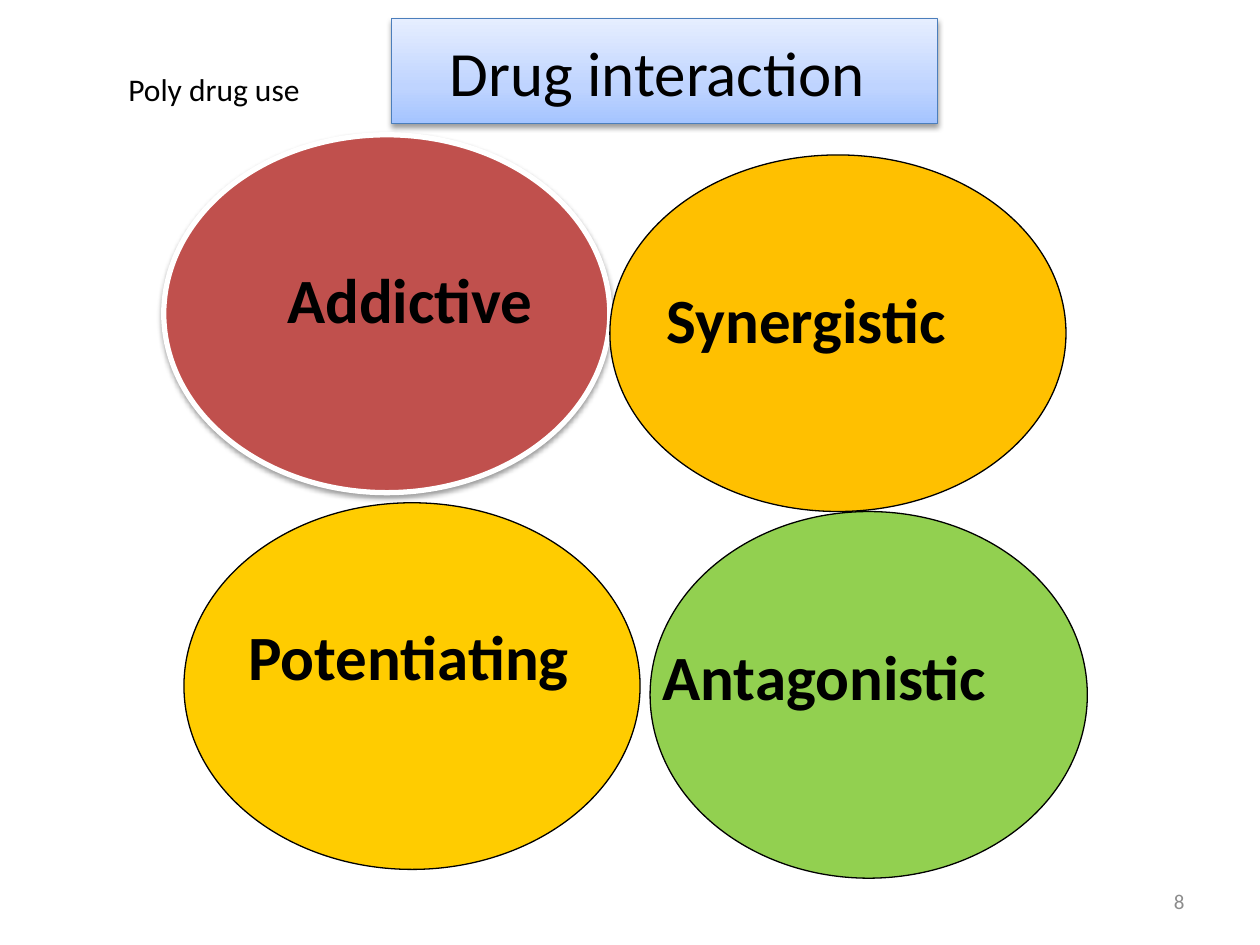
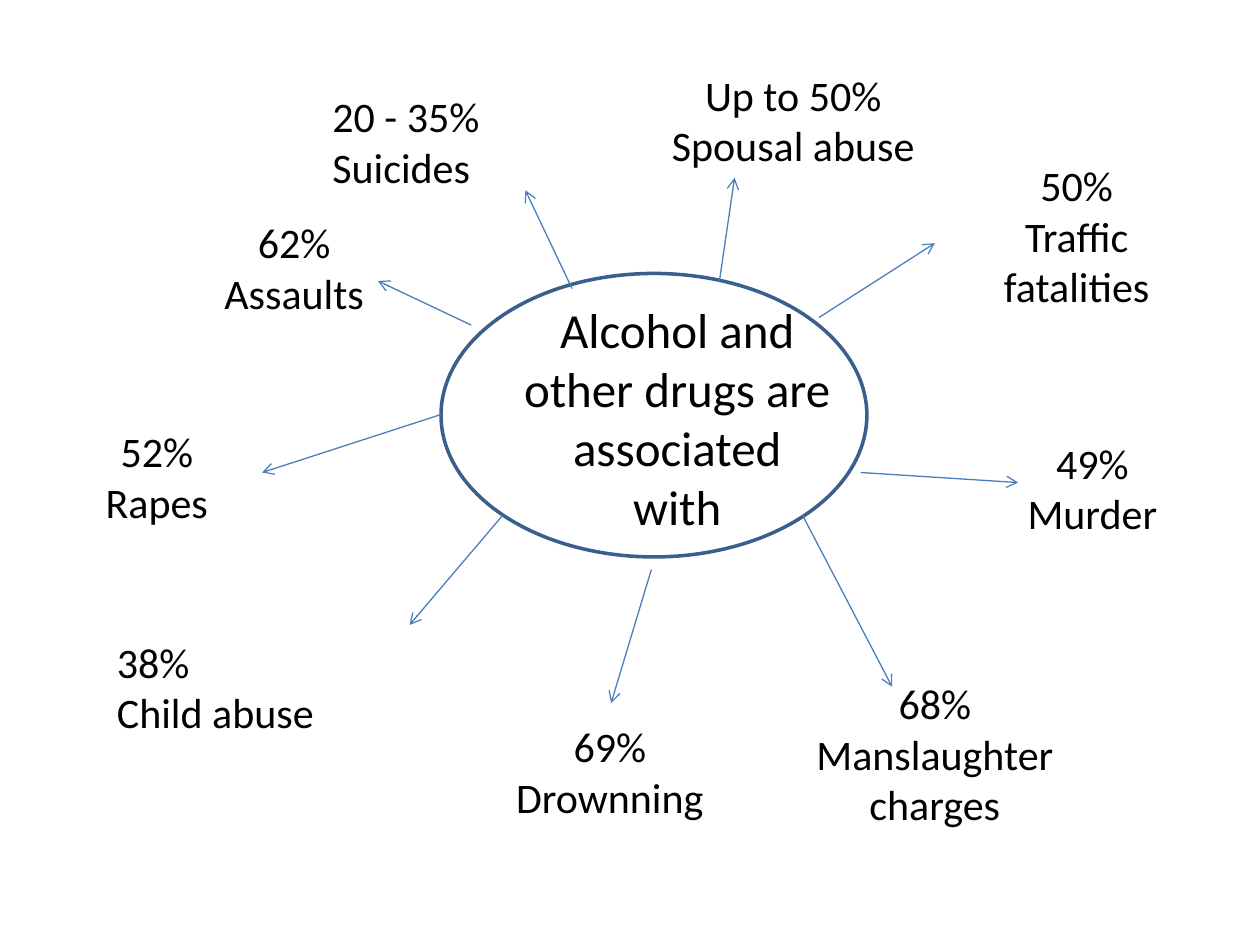
from copy import deepcopy

from lxml import etree
from pptx import Presentation
from pptx.dml.color import RGBColor
from pptx.enum import shapes, text
from pptx.oxml import ns
from pptx.util import Inches, Pt

FONT = "Calibri"
COLORS = {
    "text": "000000", "outline": "000000", "page_number": "8C8C8C", "white": "FFFFFF",
    "accent_line": "4B7EBC", "hub_line": "3A5F8C",
    "red": "C0504D", "orange": "FFC000", "yellow": "FFCC00", "green": "92D050",
}
TITLE_GRADIENT = [(0, "A4C4FF"), (0.35, "BFD4FF"), (1, "E6EEFF")]
LEFT, CENTER, RIGHT = text.PP_ALIGN.LEFT, text.PP_ALIGN.CENTER, text.PP_ALIGN.RIGHT

# Boxes are left, top, width, height in inches.
TITLE = ("Drug interaction ", (3.11, 0.21, 4.33, 0.71))
SUBTITLE = ("Poly drug use", (0.92, 0.51, 1.64, 0.4))
PAGE_NUMBER = ("8", (7.17, 6.95, 2.33, 0.4))
# label, label box, alignment, ellipse box, fill, emphasized
INTERACTIONS = [
    ("Addictive ", (2.01, 2.02, 2.6, 0.71), CENTER, (1.3, 1.07, 3.54, 2.84), "red", True),
    ("Synergistic ", (5, 2.18, 2.91, 0.71), CENTER, (4.84, 1.23, 3.62, 2.83), "orange", False),
    ("Potentiating ", (1.53, 4.85, 3.54, 0.7), CENTER, (1.46, 3.99, 3.62, 2.91), "yellow", False),
    ("Antagonistic", (5.16, 5.01, 3.31, 0.71), LEFT, (5.16, 4.06, 3.47, 2.91), "green", False),
]

HUB = ("Alcohol and\nother drugs are\nassociated\nwith", (3.91, 2.33, 2.93, 1.99))
HUB_ELLIPSE = (3.5, 2.17, 3.38, 2.25)
# label, label box, alignment, arrow start, arrow end
CONSEQUENCES = [
    ("20 - 35%\nSuicides", (2.54, 0.67, 2, 0.91), LEFT, (4.54, 2.29), (4.17, 1.51)),
    ("Up to 50%\nSpousal abuse", (5.17, 0.5, 2.25, 0.91), CENTER, (5.71, 2.23), (5.83, 1.41)),
    ("50%\nTraffic fatalities", (7.67, 1.22, 1.75, 1.31), CENTER, (6.5, 2.52), (7.42, 1.93)),
    ("49%\nMurder", (7.92, 3.42, 1.5, 0.91), CENTER, (6.83, 3.75), (8.08, 3.83)),
    ("68%\nManslaughter\ncharges", (6.17, 5.33, 2.5, 1.31), CENTER, (6.37, 4.09), (7.08, 5.45)),
    ("69%\nDrownning", (3.99, 5.67, 1.7, 0.91), CENTER, (5.17, 4.52), (4.85, 5.58)),
    ("38%\nChild abuse", (0.83, 5, 2.17, 0.91), LEFT, (3.99, 4.09), (3.25, 4.96)),
    ("52%\nRapes", (0.58, 3.33, 1.33, 0.91), CENTER, (3.5, 3.29), (2.08, 3.75)),
    ("62%\nAssaults", (1.67, 1.67, 1.33, 0.91), CENTER, (3.74, 2.58), (3, 2.23)),
]


def rgb(name):
    return RGBColor.from_string(COLORS[name])


def inches(values):
    return [Inches(value) for value in values]


def write(shape, content, size, align=CENTER, color="text", bold=False):
    frame = shape.text_frame
    frame.text = content
    for paragraph in frame.paragraphs:
        paragraph.alignment = align
        for run in paragraph.runs:
            run.font.name, run.font.size, run.font.bold = FONT, Pt(size), bold
            run.font.color.rgb = rgb(color)


def add_text(slide, content, box, size, wrap=True, **style):
    shape = slide.shapes.add_textbox(*inches(box))
    shape.text_frame.word_wrap = wrap
    write(shape, content, size, **style)
    return shape


def set_line(shape, color, width):
    shape.line.color.rgb = rgb(color)
    shape.line.width = Pt(width)


def add_ellipse(slide, box, fill, line, width):
    shape = slide.shapes.add_shape(shapes.MSO_SHAPE.OVAL, *inches(box))
    shape.shadow.inherit = False
    shape.fill.solid()
    shape.fill.fore_color.rgb = rgb(fill)
    set_line(shape, line, width)
    return shape


def add_shadow(shape):
    """Give the shape a soft shadow falling straight down."""
    shape.shadow.inherit = False
    effects = shape._element.spPr.find(ns.qn("a:effectLst"))
    shadow = etree.SubElement(effects, ns.qn("a:outerShdw"), blurRad="40000",
                              dist="20000", dir="5400000", rotWithShape="0")
    color = etree.SubElement(shadow, ns.qn("a:srgbClr"), val=COLORS["outline"])
    etree.SubElement(color, ns.qn("a:alpha"), val="38000")


def fill_gradient(shape, stops):
    shape.fill.gradient()
    shape.fill.gradient_angle = 90
    stop_list = shape._element.spPr.find(".//" + ns.qn("a:gsLst"))
    while len(stop_list) < len(stops):
        stop_list.append(deepcopy(stop_list[0]))
    for stop, (position, color) in zip(shape.fill.gradient_stops, stops):
        stop.position = position
        stop.color.rgb = RGBColor.from_string(color)


def add_arrow(slide, start, end):
    connector = slide.shapes.add_connector(
        shapes.MSO_CONNECTOR.STRAIGHT, *inches(start + end))
    set_line(connector, "accent_line", 0.75)
    etree.SubElement(connector.line._get_or_add_ln(), ns.qn("a:tailEnd"), type="arrow")
    etree.SubElement(connector._element.spPr, ns.qn("a:effectLst"))


def build_interactions(presentation):
    slide = presentation.slides.add_slide(presentation.slide_layouts[5])
    title = slide.shapes.title
    content, box = TITLE
    title.left, title.top, title.width, title.height = inches(box)
    fill_gradient(title, TITLE_GRADIENT)
    set_line(title, "accent_line", 0.75)
    add_shadow(title)
    title.text_frame.auto_size = text.MSO_AUTO_SIZE.SHAPE_TO_FIT_TEXT
    write(title, content, 36)

    for _, _, _, box, fill, emphasized in INTERACTIONS:
        line, width = ("white", 3) if emphasized else ("outline", 0.75)
        ellipse = add_ellipse(slide, box, fill, line, width)
        if emphasized:
            add_shadow(ellipse)
    for label, box, align, *_ in INTERACTIONS:
        add_text(slide, label, box, 36, align=align, bold=True)
    add_text(slide, *SUBTITLE, 18, wrap=False, align=LEFT)
    number = add_text(slide, *PAGE_NUMBER, 12, align=RIGHT, color="page_number")
    number.text_frame.vertical_anchor = text.MSO_ANCHOR.MIDDLE


def build_consequences(presentation):
    slide = presentation.slides.add_slide(presentation.slide_layouts[6])
    add_ellipse(slide, HUB_ELLIPSE, "white", "hub_line", 2)
    add_text(slide, *HUB, 28)
    for label, box, align, start, end in CONSEQUENCES:
        add_arrow(slide, start, end)
        add_text(slide, label, box, 24, align=align)


def main():
    presentation = Presentation()
    presentation.slide_width, presentation.slide_height = Inches(10), Inches(7.5)
    build_interactions(presentation)
    build_consequences(presentation)
    presentation.save("out.pptx")


if __name__ == "__main__":
    main()
